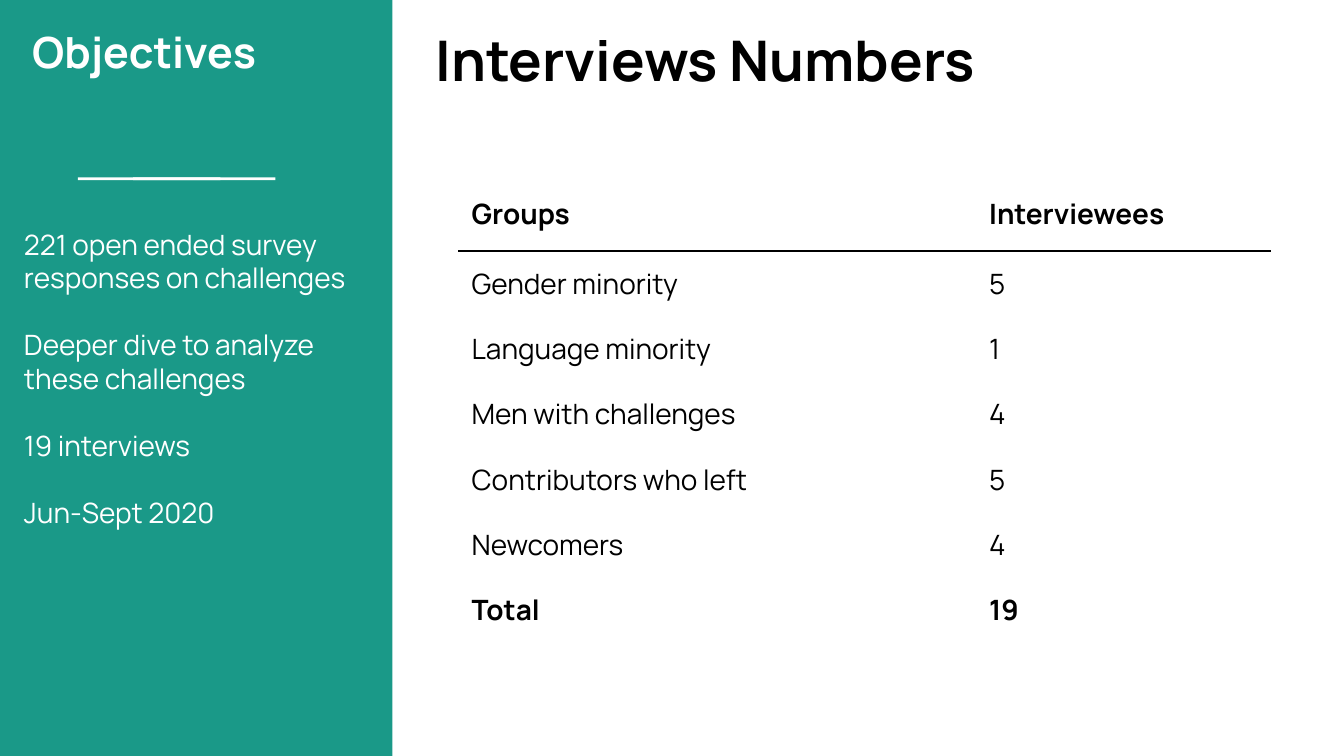
"""Build the interview numbers slide with its objectives sidebar."""
from dataclasses import dataclass

from lxml import etree
from pptx import Presentation
from pptx.dml.color import RGBColor
from pptx.enum.shapes import MSO_SHAPE
from pptx.enum.text import MSO_ANCHOR, MSO_AUTO_SIZE, PP_ALIGN
from pptx.oxml.ns import qn
from pptx.util import Inches, Pt

TEAL = RGBColor(0x1A, 0x99, 0x88)
WHITE = RGBColor(0xFF, 0xFF, 0xFF)
BLACK = RGBColor(0x00, 0x00, 0x00)
FONT = "Manrope"
RECTANGLE = MSO_SHAPE.RECTANGLE
TOP = MSO_ANCHOR.TOP
LEFT = PP_ALIGN.LEFT
NO_AUTOFIT = MSO_AUTO_SIZE.NONE
MARGIN = Inches(0.1)
TITLE_ONLY = 5
SLIDE_WIDTH, SLIDE_HEIGHT = Inches(10), Inches(10) * 9 // 16

OBJECTIVES = [
    "221 open ended survey responses on challenges",
    "Deeper dive to analyze these challenges",
    "19 interviews",
    "Jun-Sept 2020",
]
ROWS = [
    ("Groups", "Interviewees"),
    ("Gender minority", "5"),
    ("Language minority", "1"),
    ("Men with challenges", "4"),
    ("Contributors who left", "5"),
    ("Newcomers", "4"),
    ("Total", "19"),
]
COLUMN_WIDTHS = (3.85, 2.2)
HEADER_HEIGHT, ROW_HEIGHT = 0.52, 0.48
BORDER_SIDES = ("lnL", "lnR", "lnT", "lnB")
RULED_SIDES = {0: "lnB", 1: "lnT"}


@dataclass(frozen=True)
class Box:
    left: float
    top: float
    width: float
    height: float

    def lengths(self) -> tuple:
        return tuple(map(Inches, (self.left, self.top, self.width, self.height)))


@dataclass(frozen=True)
class TextStyle:
    size: float
    color: RGBColor
    bold: bool = False
    space_after: float = 0


PANEL = Box(2.92, 0, 7.08, 5.63)
DIVIDERS = [Box(left, 1.32, 1.06, 0.02) for left in (0.58, 0.99)]


def add_rectangle(slide, box: Box) -> None:
    shape = slide.shapes.add_shape(RECTANGLE, *box.lengths())
    shape.shadow.inherit = False
    shape.fill.solid()
    shape.fill.fore_color.rgb = WHITE
    shape.line.fill.background()


def write_text(text_frame, lines: list[str], style: TextStyle) -> None:
    text_frame.text = "\n".join(lines)
    for paragraph in text_frame.paragraphs:
        paragraph.alignment = LEFT
        paragraph.line_spacing = 1.0
        paragraph.space_before = Pt(0)
        paragraph.space_after = Pt(style.space_after)
        for run in paragraph.runs:
            run.font.name = FONT
            run.font.size = Pt(style.size)
            run.font.bold = style.bold
            run.font.color.rgb = style.color


def fill_text_shape(shape, box: Box, lines: list[str], style: TextStyle) -> None:
    shape.left, shape.top, shape.width, shape.height = box.lengths()
    text_frame = shape.text_frame
    text_frame.word_wrap = True
    text_frame.auto_size = NO_AUTOFIT
    text_frame.vertical_anchor = TOP
    text_frame.margin_left = text_frame.margin_right = MARGIN
    text_frame.margin_top = text_frame.margin_bottom = MARGIN
    write_text(text_frame, lines, style)


def add_text(slide, box: Box, lines: list[str], style: TextStyle) -> None:
    fill_text_shape(slide.shapes.add_textbox(*box.lengths()), box, lines, style)


def set_borders(cell, ruled_side: str | None) -> None:
    properties = cell._tc.get_or_add_tcPr()
    for position, side in enumerate(BORDER_SIDES):
        line = etree.Element(qn(f"a:{side}"), w=str(Pt(1.5)))
        if side == ruled_side:
            fill = etree.SubElement(line, qn("a:solidFill"))
            etree.SubElement(fill, qn("a:srgbClr"), val=str(BLACK))
        else:
            etree.SubElement(line, qn("a:noFill"))
        properties.insert(position, line)


def add_interview_table(slide) -> None:
    height = HEADER_HEIGHT + ROW_HEIGHT * (len(ROWS) - 1)
    box = Box(3.41, 1.35, sum(COLUMN_WIDTHS), height)
    table = slide.shapes.add_table(len(ROWS), len(COLUMN_WIDTHS), *box.lengths()).table
    table.first_row = table.horz_banding = False
    for column, width in zip(table.columns, COLUMN_WIDTHS):
        column.width = Inches(width)
    for row_index, values in enumerate(ROWS):
        table.rows[row_index].height = Inches(ROW_HEIGHT if row_index else HEADER_HEIGHT)
        style = TextStyle(15, BLACK, bold=row_index in (0, len(ROWS) - 1))
        for column_index, value in enumerate(values):
            cell = table.cell(row_index, column_index)
            cell.fill.background()
            cell.vertical_anchor = TOP
            cell.margin_left = cell.margin_right = MARGIN
            cell.margin_top = cell.margin_bottom = MARGIN
            write_text(cell.text_frame, [value], style)
            set_borders(cell, RULED_SIDES.get(row_index))


def main() -> None:
    presentation = Presentation()
    presentation.slide_width = SLIDE_WIDTH
    presentation.slide_height = SLIDE_HEIGHT
    slide = presentation.slides.add_slide(presentation.slide_layouts[TITLE_ONLY])
    slide.background.fill.solid()
    slide.background.fill.fore_color.rgb = TEAL

    for box in (*DIVIDERS, PANEL):
        add_rectangle(slide, box)
    add_text(slide, Box(0.14, 0.09, 2.68, 1.1), ["Objectives"],
             TextStyle(23, WHITE, bold=True))
    add_interview_table(slide)
    add_text(slide, Box(0.08, 1.59, 2.78, 2.81), OBJECTIVES,
             TextStyle(15, WHITE, space_after=18))

    title = slide.shapes.title
    fill_text_shape(title, Box(3.14, 0.09, 6.51, 0.8), ["Interviews Numbers"],
                    TextStyle(30, BLACK, bold=True))
    title.element.getparent().append(title.element)
    presentation.save("out.pptx")


if __name__ == "__main__":
    main()
